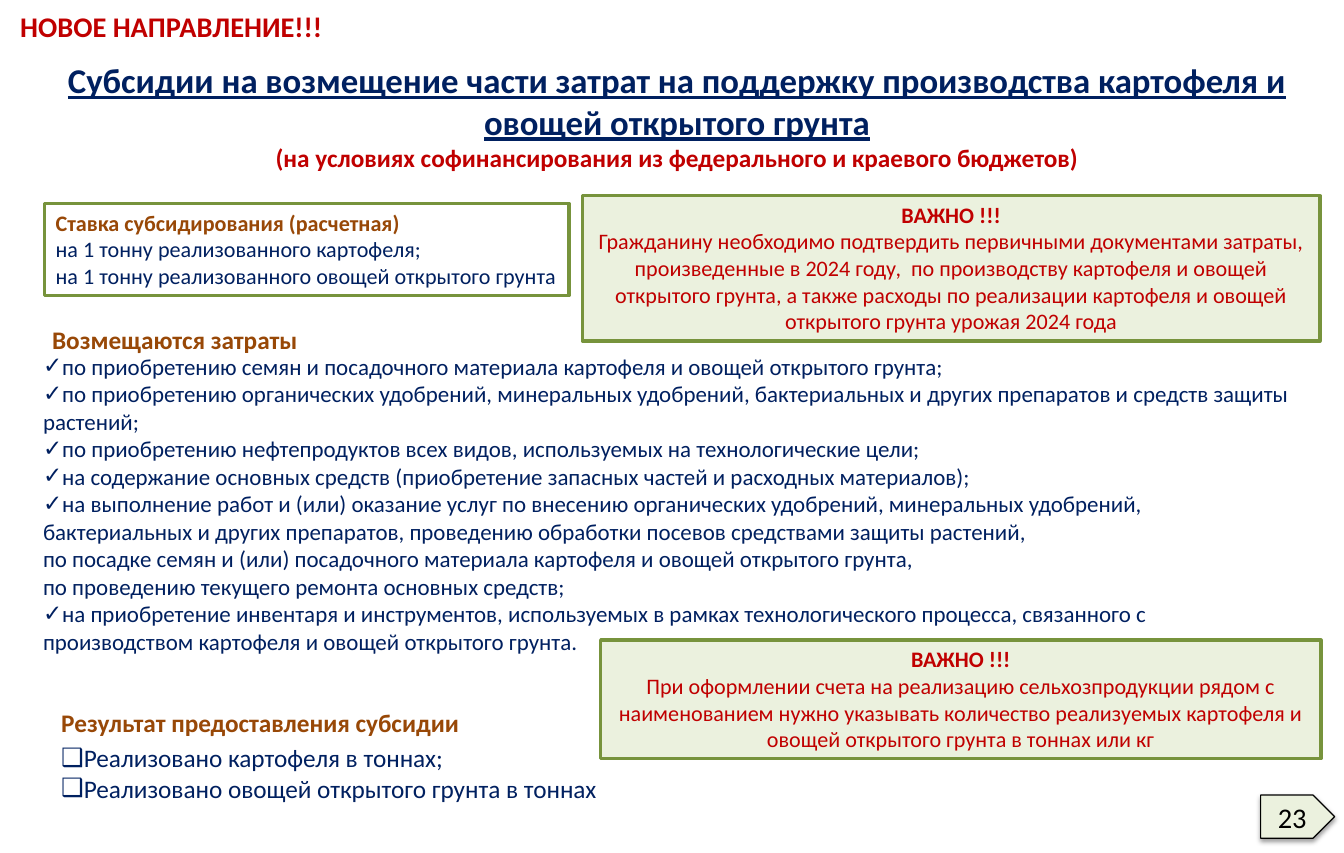
from lxml import etree
from pptx import Presentation
from pptx import util as u
from pptx.dml.color import RGBColor
from pptx.enum import shapes, text
from pptx.oxml import parse_xml
from pptx.oxml.ns import nsdecls, qn

PX = 9144  # 100 px to the inch
SLIDE_WIDTH, SLIDE_HEIGHT = 10801350, 6858000  # EMU
FONT = "Calibri"
NAVY, RED, BROWN = "002060", "C00000", "984807"
GREEN, PALE, BLACK = "77933C", "EBF1DE", "000000"
LEFT, CENTER = text.PP_ALIGN.LEFT, text.PP_ALIGN.CENTER
TOP, MIDDLE = text.MSO_ANCHOR.TOP, text.MSO_ANCHOR.MIDDLE
FIT = text.MSO_AUTO_SIZE.SHAPE_TO_FIT_TEXT

COSTS = [
    "по приобретению семян и посадочного материала картофеля и овощей открытого грунта;",
    "по приобретению органических удобрений, минеральных удобрений, бактериальных "
    "и других препаратов и средств защиты растений;",
    "по приобретению нефтепродуктов всех видов, используемых на технологические цели;",
    "на содержание основных средств (приобретение запасных частей и расходных материалов);",
    "на выполнение работ и (или) оказание услуг по внесению органических удобрений, "
    "минеральных удобрений, бактериальных и других препаратов, проведению обработки "
    "посевов средствами защиты растений, \n"
    "по посадке семян и (или) посадочного материала картофеля и овощей открытого грунта,\n"
    "по проведению текущего ремонта основных средств;",
    "на приобретение инвентаря и инструментов, используемых в рамках технологического "
    "процесса, связанного с производством картофеля и овощей открытого грунта.",
]
RESULTS = [
    "Реализовано картофеля в тоннах;",
    "Реализовано овощей открытого грунта в тоннах",
]
RATES = [
    "на 1 тонну реализованного картофеля;",
    "на 1 тонну реализованного овощей открытого грунта",
]
DOCUMENTS_NOTE = (
    "Гражданину необходимо подтвердить первичными документами затраты, произведенные "
    "в 2024 году,  по производству картофеля и овощей открытого грунта, а также расходы "
    "по реализации картофеля и овощей открытого грунта урожая 2024 года"
)
INVOICE_NOTE = (
    "При оформлении счета на реализацию сельхозпродукции рядом с наименованием нужно "
    "указывать количество реализуемых картофеля и овощей открытого грунта в тоннах или кг"
)


def color(value):
    return RGBColor.from_string(value)


def box(*lengths):
    return [u.Emu(length * PX) for length in lengths]


def line(words, size, fill, bold=False, underline=False):
    """Describe one paragraph for write()."""
    return words, size, fill, bold, underline


def add_bullet(paragraph, character):
    properties = paragraph._p.get_or_add_pPr()
    etree.SubElement(properties, qn("a:buFont")).set("typeface", FONT)
    etree.SubElement(properties, qn("a:buChar")).set("char", character)


def write(shape, lines, align=LEFT, bullet=None, wrap=True, anchor=TOP, fit=FIT):
    frame = shape.text_frame
    frame.word_wrap = wrap
    frame.vertical_anchor = anchor
    frame.auto_size = fit
    for index, (words, size, fill, bold, underline) in enumerate(lines):
        paragraph = frame.paragraphs[0] if index == 0 else frame.add_paragraph()
        paragraph.alignment = align
        if bullet:
            add_bullet(paragraph, bullet)
        for number, part in enumerate(words.split("\n")):
            if number:
                paragraph.add_line_break()
            run = paragraph.add_run()
            run.text = part
            run.font.name = FONT
            run.font.size = u.Pt(size)
            run.font.bold = bold
            run.font.underline = underline
            run.font.color.rgb = color(fill)


def add_text(slide, place, lines, **options):
    write(slide.shapes.add_textbox(*box(*place)), lines, **options)


def add_panel(slide, place, lines, fill=None, outline=GREEN, width=2.25,
              kind=shapes.MSO_SHAPE.RECTANGLE, **options):
    shape = slide.shapes.add_shape(kind, *box(*place))
    shape.shadow.inherit = False
    if fill:
        shape.fill.solid()
        shape.fill.fore_color.rgb = color(fill)
    else:
        shape.fill.background()
    shape.line.color.rgb = color(outline)
    shape.line.width = u.Pt(width)
    write(shape, lines, **options)
    return shape


def add_notice(slide, place, message):
    lines = [line("ВАЖНО !!!", 14, RED, bold=True), line(message, 14, RED)]
    add_panel(slide, place, lines, fill=PALE, align=CENTER)


def add_page_number(slide, place, number):
    tag = add_panel(slide, place, [line(number, 18, BLACK)], fill=PALE, outline=BLACK,
                    width=0.75, kind=shapes.MSO_SHAPE.PENTAGON, align=CENTER,
                    anchor=MIDDLE, fit=text.MSO_AUTO_SIZE.NONE)
    effects = tag._element.spPr.find(qn("a:effectLst"))
    effects.append(parse_xml(
        f'<a:outerShdw {nsdecls("a")} blurRad="{u.Pt(3.1)}" dist="{u.Pt(1.6)}" '
        f'dir="5400000" rotWithShape="0"><a:srgbClr val="{BLACK}">'
        '<a:alpha val="38000"/></a:srgbClr></a:outerShdw>'))


def set_title(slide, place):
    title = slide.shapes.title
    title.left, title.top, title.width, title.height = box(*place)
    write(title, [
        line("Субсидии на возмещение части затрат на поддержку производства картофеля "
             "и овощей открытого грунта", 22, NAVY, bold=True, underline=True),
        line("(на условиях софинансирования из федерального и краевого бюджетов)",
             16, RED, bold=True),
    ], align=CENTER)


def main():
    presentation = Presentation()
    presentation.slide_width = u.Emu(SLIDE_WIDTH)
    presentation.slide_height = u.Emu(SLIDE_HEIGHT)
    slide = presentation.slides.add_slide(presentation.slide_layouts[5])

    set_title(slide, (44, 47, 1102, 114))
    add_panel(slide, (39, 179, 461, 81),
              [line("Ставка субсидирования (расчетная)", 14, BROWN, bold=True)]
              + [line(rate, 14, NAVY) for rate in RATES])
    add_notice(slide, (512, 172, 648, 128), DOCUMENTS_NOTE)
    add_page_number(slide, (1108, 699, 65, 38), "23")
    add_text(slide, (8, 3, 344, 40), [line("НОВОЕ НАПРАВЛЕНИЕ!!!", 18, RED, bold=True)])
    add_text(slide, (44, 617, 374, 37),
             [line("Результат предоставления субсидии", 16, BROWN, bold=True)], wrap=False)
    add_text(slide, (44, 648, 500, 64), [line(result, 16, NAVY) for result in RESULTS],
             bullet="❑")
    add_text(slide, (36, 280, 239, 37),
             [line("Возмещаются затраты", 16, BROWN, bold=True)], wrap=False)
    add_text(slide, (28, 305, 1117, 279), [line(cost, 14.5, NAVY) for cost in COSTS],
             bullet="✓")
    add_notice(slide, (528, 563, 633, 104), INVOICE_NOTE)

    presentation.save("out.pptx")


if __name__ == "__main__":
    main()
